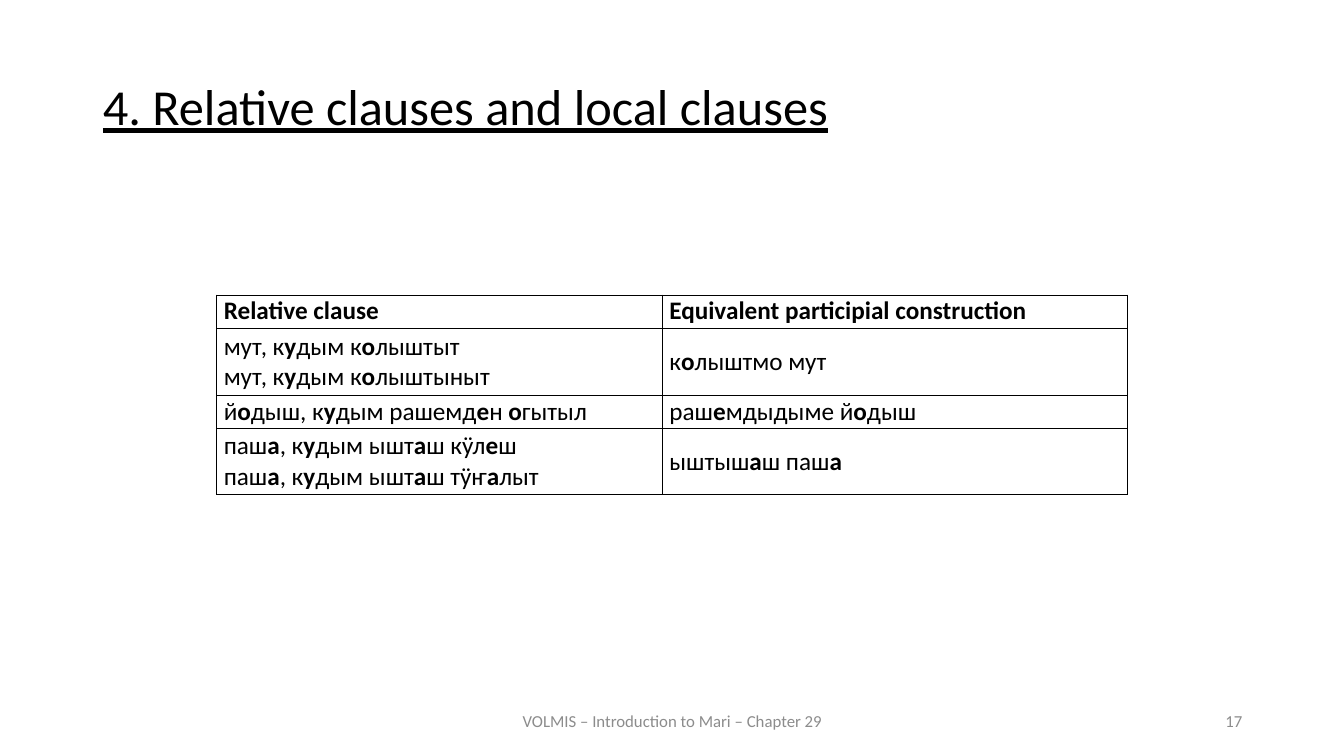
from lxml import etree
from pptx import Presentation
from pptx.dml.color import RGBColor
from pptx.enum.text import MSO_ANCHOR, PP_ALIGN
from pptx.oxml.ns import qn
from pptx.util import Inches, Pt

LEFT, MID, RIGHT, FULL = PP_ALIGN.LEFT, PP_ALIGN.CENTER, PP_ALIGN.RIGHT, PP_ALIGN.JUSTIFY
TOP, CENTER = MSO_ANCHOR.TOP, MSO_ANCHOR.MIDDLE
COLORS = {"ink": "000000", "muted": "8C8C8C"}

# Asterisks enclose bold letters; a line break starts a new paragraph
ROWS = [
    ("*Relative clause*", "*Equivalent participial construction*"),
    ("мут, к*у*дым к*о*лыштыт\nмут, к*у*дым к*о*лыштыныт", "к*о*лыштмо мут"),
    ("й*о*дыш, к*у*дым рашемд*е*н *о*гытыл", "раш*е*мдыдыме й*о*дыш"),
    ("паш*а*, к*у*дым ышт*а*ш кӱл*е*ш\nпаш*а*, к*у*дым ышт*а*ш тӱҥ*а*лыт", "ыштыш*а*ш паш*а*"),
]
WIDTHS = [4.42, 4.61]
HEIGHTS = [0.33, 0.66, 0.33, 0.66]


def write(frame, text, size=18, color="ink", align=LEFT, under=False, space=None, before=None):
    """Fill a text frame, with bold for parts between asterisks."""
    for row, line in enumerate(text.split("\n")):
        para = frame.add_paragraph() if row else frame.paragraphs[0]
        para.alignment = align
        if space:
            para.line_spacing = space
        if before:
            para.space_before = Pt(before)
        for pos, part in enumerate(line.split("*")):
            if not part:
                continue
            run = para.add_run()
            run.text = part
            font = run.font
            font.name, font.size = "Calibri", Pt(size)
            font.bold = pos % 2 == 1
            font.underline = under
            font.color.rgb = RGBColor.from_string(COLORS[color])


class Page:
    def __init__(self, deck):
        self.slide = deck.slides.add_slide(deck.slide_layouts[5])

    def title(self, text, box):
        shape = self.slide.shapes.title
        shape.left, shape.top, shape.width, shape.height = map(Inches, box)
        frame = shape.text_frame
        frame.word_wrap = True
        frame.vertical_anchor = TOP
        write(frame, text, size=36, align=FULL, under=True, space=0.9, before=12)

    def label(self, text, box, align):
        frame = self.slide.shapes.add_textbox(*map(Inches, box)).text_frame
        frame.word_wrap = True
        frame.vertical_anchor = CENTER
        write(frame, text, size=12, color="muted", align=align)

    def border(self, cell):
        props = cell._tc.get_or_add_tcPr()
        for pos, side in enumerate(("a:lnL", "a:lnR", "a:lnT", "a:lnB")):
            line = etree.Element(qn(side), w=str(Pt(1)))
            fill = etree.SubElement(line, qn("a:solidFill"))
            etree.SubElement(fill, qn("a:srgbClr"), val=COLORS["ink"])
            props.insert(pos, line)

    def table(self, rows, left, top, widths, heights):
        box = map(Inches, (left, top, sum(widths), sum(heights)))
        grid = self.slide.shapes.add_table(len(rows), len(widths), *box).table
        grid.first_row = grid.horz_banding = False
        for col, width in zip(grid.columns, widths):
            col.width = Inches(width)
        for r, (texts, height) in enumerate(zip(rows, heights)):
            grid.rows[r].height = Inches(height)
            for c, text in enumerate(texts):
                cell = grid.cell(r, c)
                cell.margin_left = cell.margin_right = Inches(0.07)
                cell.margin_top = cell.margin_bottom = 0
                cell.vertical_anchor = CENTER if r else TOP
                cell.fill.background()
                self.border(cell)
                write(cell.text_frame, text, align=LEFT if r else FULL)


def main():
    deck = Presentation()
    deck.slide_width, deck.slide_height = Inches(13.33), Inches(7.5)
    page = Page(deck)

    # Heading
    page.title("4. Relative clauses and local clauses", (0.92, 0.76, 11.5, 0.83))

    # Comparison of constructions
    page.table(ROWS, 2.15, 2.93, WIDTHS, HEIGHTS)

    # Footer and page number
    page.label("VOLMIS – Introduction to Mari – Chapter 29", (4.42, 6.95, 4.5, 0.4), MID)
    page.label("17", (9.42, 6.95, 3, 0.4), RIGHT)

    deck.save("out.pptx")


if __name__ == "__main__":
    main()
